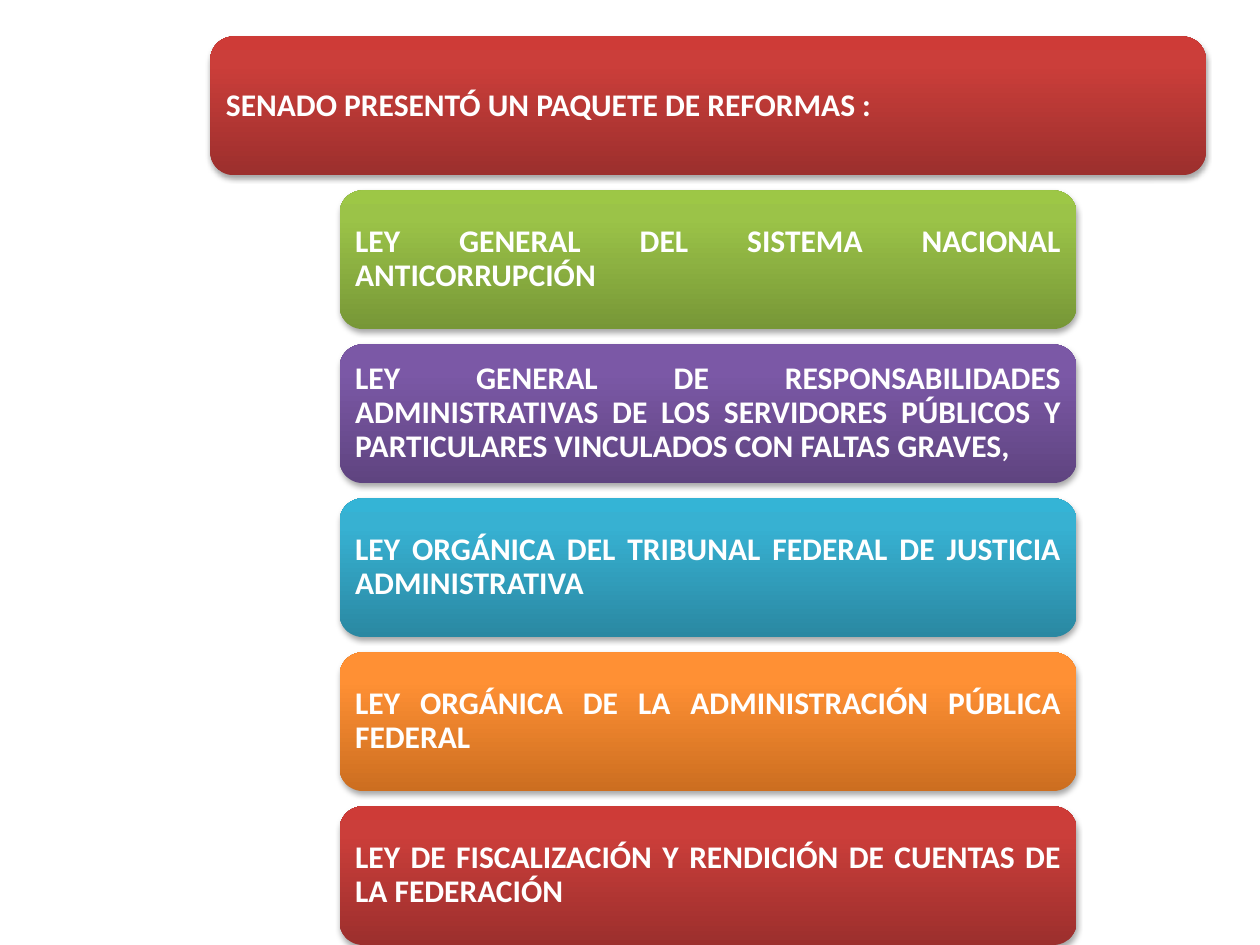
from copy import deepcopy

from lxml import etree
from pptx import Presentation
from pptx.dml.color import RGBColor
from pptx.enum.shapes import MSO_SHAPE
from pptx.enum.text import MSO_ANCHOR, PP_ALIGN
from pptx.oxml.ns import qn
from pptx.util import Inches, Pt

ROUNDED = MSO_SHAPE.ROUNDED_RECTANGLE
MIDDLE = MSO_ANCHOR.MIDDLE
JUSTIFY = PP_ALIGN.JUSTIFY

TOP = 0.29
BOX_HEIGHT = 1.1
GAP = 0.122
CENTER = 5.62
TITLE_WIDTH = 7.9
LAW_WIDTH = 5.85
STOP_POSITIONS = (0, 0.8, 1)

RED = ("9C2F2D", "CB3E3A", "CE3B37")
GREEN = ("779737", "9BC348", "9DC746")
PURPLE = ("5F4480", "7B58A6", "7C57A8")
BLUE = ("2A88A2", "37B1D2", "34B4D6")
ORANGE = ("CC6E20", "FF9034", "FF9136")

TITLE = "SENADO PRESENTÓ UN PAQUETE DE REFORMAS :"
LAWS = [
    ("LEY GENERAL DEL SISTEMA NACIONAL ANTICORRUPCIÓN", GREEN),
    ("LEY GENERAL DE RESPONSABILIDADES ADMINISTRATIVAS DE LOS SERVIDORES "
     "PÚBLICOS Y PARTICULARES VINCULADOS CON FALTAS GRAVES,", PURPLE),
    ("LEY ORGÁNICA DEL TRIBUNAL FEDERAL DE JUSTICIA ADMINISTRATIVA", BLUE),
    ("LEY ORGÁNICA DE LA ADMINISTRACIÓN PÚBLICA FEDERAL", ORANGE),
    ("LEY DE FISCALIZACIÓN Y RENDICIÓN DE CUENTAS DE LA FEDERACIÓN", RED),
]


def color(value):
    return RGBColor.from_string(value)


def fill_gradient(box, shades):
    box.fill.gradient()
    box.fill.gradient_angle = 90
    stop_list = box._element.spPr.find(".//" + qn("a:gsLst"))
    stop_list.append(deepcopy(stop_list[-1]))
    for stop, position, shade in zip(box.fill.gradient_stops, STOP_POSITIONS, shades):
        stop.position = position
        stop.color.rgb = color(shade)


def add_shadow(box):
    box.shadow.inherit = False
    effects = box._element.spPr.find(qn("a:effectLst"))
    shadow = etree.SubElement(
        effects, qn("a:outerShdw"), blurRad=str(Pt(3.1)), dist=str(Pt(1.8)),
        dir="5400000", rotWithShape="0")
    shade = etree.SubElement(shadow, qn("a:srgbClr"), val="000000")
    etree.SubElement(shade, qn("a:alpha"), val="35000")


def write_text(box, text):
    frame = box.text_frame
    frame.text = text
    frame.word_wrap = True
    frame.vertical_anchor = MIDDLE
    frame.margin_left = frame.margin_right = Inches(0.07)
    frame.margin_top = frame.margin_bottom = Inches(0.07)
    para = frame.paragraphs[0]
    para.alignment = JUSTIFY
    para.line_spacing = 0.9
    font = para.runs[0].font
    font.name = "Calibri"
    font.size = Pt(18)
    font.bold = True
    font.color.rgb = color("FFFFFF")


def add_box(page, row, width, text, shades):
    box = page.shapes.add_shape(
        ROUNDED, Inches(CENTER - width / 2), Inches(TOP + row * (BOX_HEIGHT + GAP)),
        Inches(width), Inches(BOX_HEIGHT))
    fill_gradient(box, shades)
    box.line.fill.background()
    add_shadow(box)
    write_text(box, text)


def main():
    deck = Presentation()
    deck.slide_width = Inches(10)
    deck.slide_height = Inches(7.5)
    page = deck.slides.add_slide(deck.slide_layouts[6])
    add_box(page, 0, TITLE_WIDTH, TITLE, RED)
    for row, (law, shades) in enumerate(LAWS, start=1):
        add_box(page, row, LAW_WIDTH, law, shades)
    deck.save("out.pptx")


if __name__ == "__main__":
    main()
